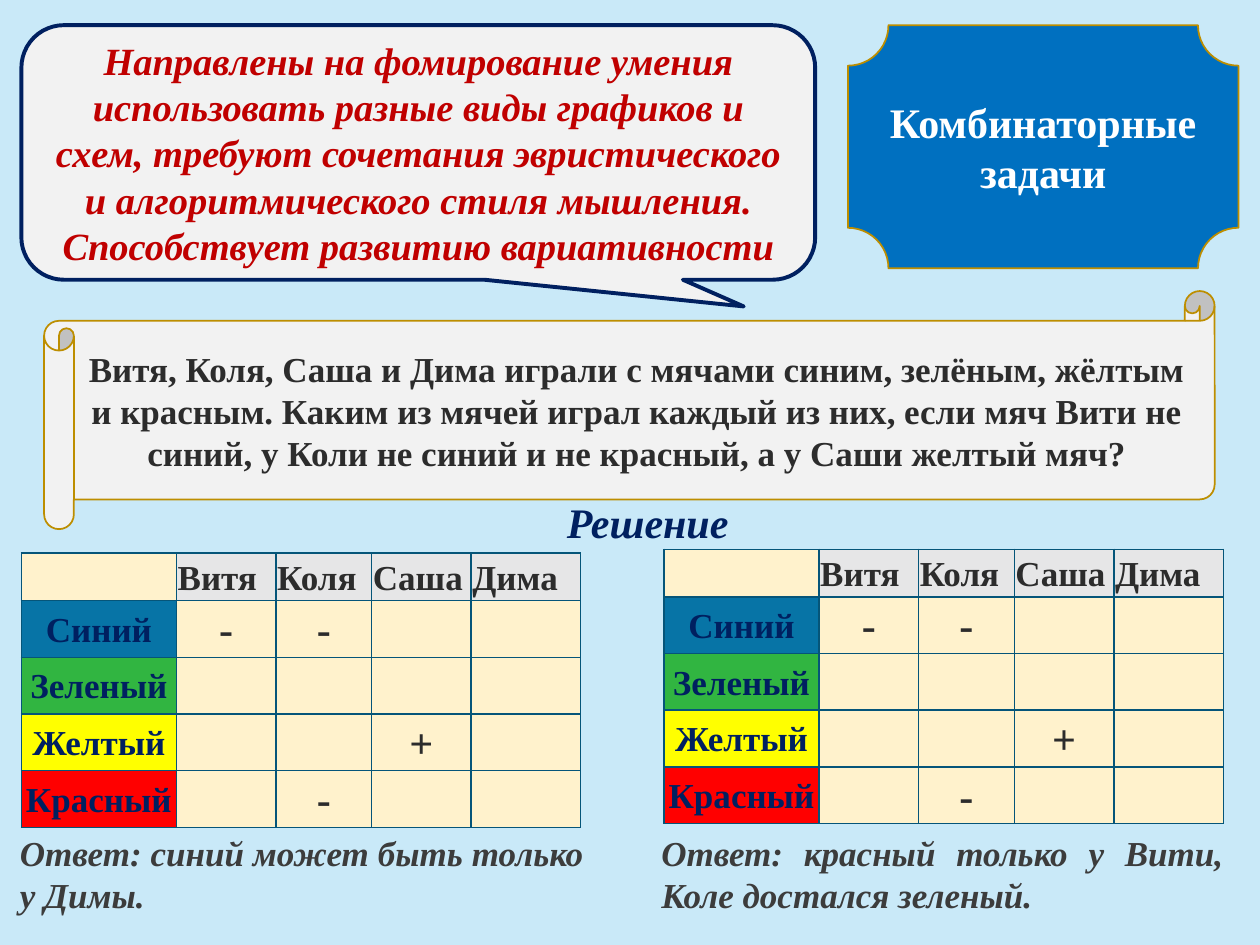
from lxml import etree
from pptx import Presentation
from pptx.dml.color import RGBColor
from pptx.enum.shapes import MSO_SHAPE
from pptx.enum.text import MSO_ANCHOR, PP_ALIGN
from pptx.oxml.ns import qn
from pptx.util import Inches, Pt

CENTER, JUSTIFY, LEFT = PP_ALIGN.CENTER, PP_ALIGN.JUSTIFY, PP_ALIGN.LEFT
MIDDLE = MSO_ANCHOR.MIDDLE
FONT = "Times New Roman"
NAVY, DARK, GREY, GOLD = "002060", "2C2C2C", "3C3C3C", "BD8E00"
PAPER, CREAM, HEADER, BORDER = "F2F2F2", "FFF2CC", "E6E6E7", "055579"

# Content
TITLE = "Комбинаторные задачи"
PURPOSE = ("Направлены на фомирование умения использовать разные виды графиков и "
           "схем, требуют сочетания эвристического и алгоритмического стиля "
           "мышления. Способствует развитию вариативности")
TASK = ("Витя, Коля, Саша и Дима играли с мячами синим, зелёным, жёлтым и красным. "
        "Каким из мячей играл каждый из них, если мяч Вити не синий, у Коли не "
        "синий и не красный, а у Саши желтый мяч?")
SOLUTION = "Решение"
GRID = [
    ["", "Витя", "Коля", "Саша", "Дима"],
    ["Синий", "-", "-", "", ""],
    ["Зеленый", "", "", "", ""],
    ["Желтый", "", "", "+", ""],
    ["Красный", "", "-", "", ""],
]
BALL_FILLS = ["0774A6", "31B541", "FFFF00", "FF0000"]
COLUMN_WIDTHS = [1.23, 0.79, 0.76, 0.79, 0.87]
ROW_HEIGHTS = [0.37] + [0.45] * 4
TABLE_PLACES = [(0.17, 4.39), (5.27, 4.36)]
ANSWERS = [
    ("Ответ: синий может быть только у Димы.", (0.06, 6.55, 4.67, 0.77)),
    ("Ответ: красный только у Вити, Коле достался зеленый.", (5.15, 6.55, 4.66, 0.77)),
]


def rgb(value):
    return RGBColor.from_string(value)


def write(frame, text, size, color, align, italic=False, after=0, spacing=None):
    frame.text = text
    para = frame.paragraphs[0]
    para.alignment = align
    para.space_after = Pt(after)
    para.line_spacing = spacing
    for span in para.runs:
        font = span.font
        font.name, font.size = FONT, Pt(size)
        font.bold, font.italic = True, italic
        font.color.rgb = rgb(color)


def add_panel(page, kind, place, fill, line, width):
    panel = page.shapes.add_shape(kind, *map(Inches, place))
    panel.shadow.inherit = False
    panel.fill.solid()
    panel.fill.fore_color.rgb = rgb(fill)
    panel.line.color.rgb = rgb(line)
    panel.line.width = Pt(width)
    panel.text_frame.word_wrap = True
    panel.text_frame.vertical_anchor = MIDDLE
    return panel


def add_label(page, text, place, size, color, align, wrap=True, after=0):
    box = page.shapes.add_textbox(*map(Inches, place))
    box.text_frame.word_wrap = wrap
    write(box.text_frame, text, size, color, align, italic=True, after=after)


def add_borders(cell):
    properties = cell._tc.get_or_add_tcPr()
    for index, side in enumerate(("lnL", "lnR", "lnT", "lnB")):
        line = etree.Element(qn(f"a:{side}"), w=str(Pt(1)))
        fill = etree.SubElement(line, qn("a:solidFill"))
        etree.SubElement(fill, qn("a:srgbClr"), val=BORDER)
        properties.insert(index, line)


def cell_style(row, column):
    """Return fill, text size, text colour and alignment."""
    if row == 0:
        return (HEADER if column else CREAM), 20, DARK, JUSTIFY
    if column == 0:
        return BALL_FILLS[row - 1], 20, NAVY, CENTER
    return CREAM, 24, DARK, CENTER


def add_grid(page, left, top):
    size = (sum(COLUMN_WIDTHS), sum(ROW_HEIGHTS))
    frame = page.shapes.add_table(len(GRID), len(GRID[0]),
                                  *map(Inches, (left, top, *size)))
    table = frame.table
    for column, width in zip(table.columns, COLUMN_WIDTHS):
        column.width = Inches(width)
    for row, height in zip(table.rows, ROW_HEIGHTS):
        row.height = Inches(height)
    for r, texts in enumerate(GRID):
        for c, text in enumerate(texts):
            fill, points, color, align = cell_style(r, c)
            cell = table.cell(r, c)
            cell.margin_left = cell.margin_right = Inches(0.01)
            cell.margin_top = cell.margin_bottom = Inches(0.01)
            cell.vertical_anchor = MIDDLE
            cell.fill.solid()
            cell.fill.fore_color.rgb = rgb(fill)
            add_borders(cell)
            if text:
                write(cell.text_frame, text, points, color, align, after=8, spacing=1.07)


def main():
    deck = Presentation()
    deck.slide_width, deck.slide_height = Inches(10), Inches(7.5)
    page = deck.slides.add_slide(deck.slide_layouts[6])
    page.background.fill.solid()
    page.background.fill.fore_color.rgb = rgb("C9E9F8")

    # Heading plaque and callout
    plaque = add_panel(page, MSO_SHAPE.PLAQUE, (6.73, 0.2, 3.1, 1.93), "0070C0", GOLD, 1)
    write(plaque.text_frame, TITLE, 24, "FFFFFF", CENTER)
    callout = add_panel(page, MSO_SHAPE.ROUNDED_RECTANGULAR_CALLOUT,
                        (0.17, 0.2, 6.3, 2.02), PAPER, NAVY, 2.25)
    for index, value in enumerate((0.41, 0.605, 0.167)):
        callout.adjustments[index] = value
    write(callout.text_frame, PURPOSE, 22, "C00000", CENTER, italic=True)

    # Task scroll
    scroll = add_panel(page, MSO_SHAPE.HORIZONTAL_SCROLL, (0.35, 2.31, 9.29, 1.89),
                       PAPER, GOLD, 1)
    write(scroll.text_frame, TASK, 20, DARK, CENTER, after=8)

    # Solution tables and answers
    add_label(page, SOLUTION, (4.4, 3.89, 1.61, 0.5), 24, NAVY, LEFT, wrap=False)
    for left, top in TABLE_PLACES:
        add_grid(page, left, top)
    for text, place in ANSWERS:
        add_label(page, text, place, 20, GREY, JUSTIFY, after=8)

    deck.save("out.pptx")


if __name__ == "__main__":
    main()
